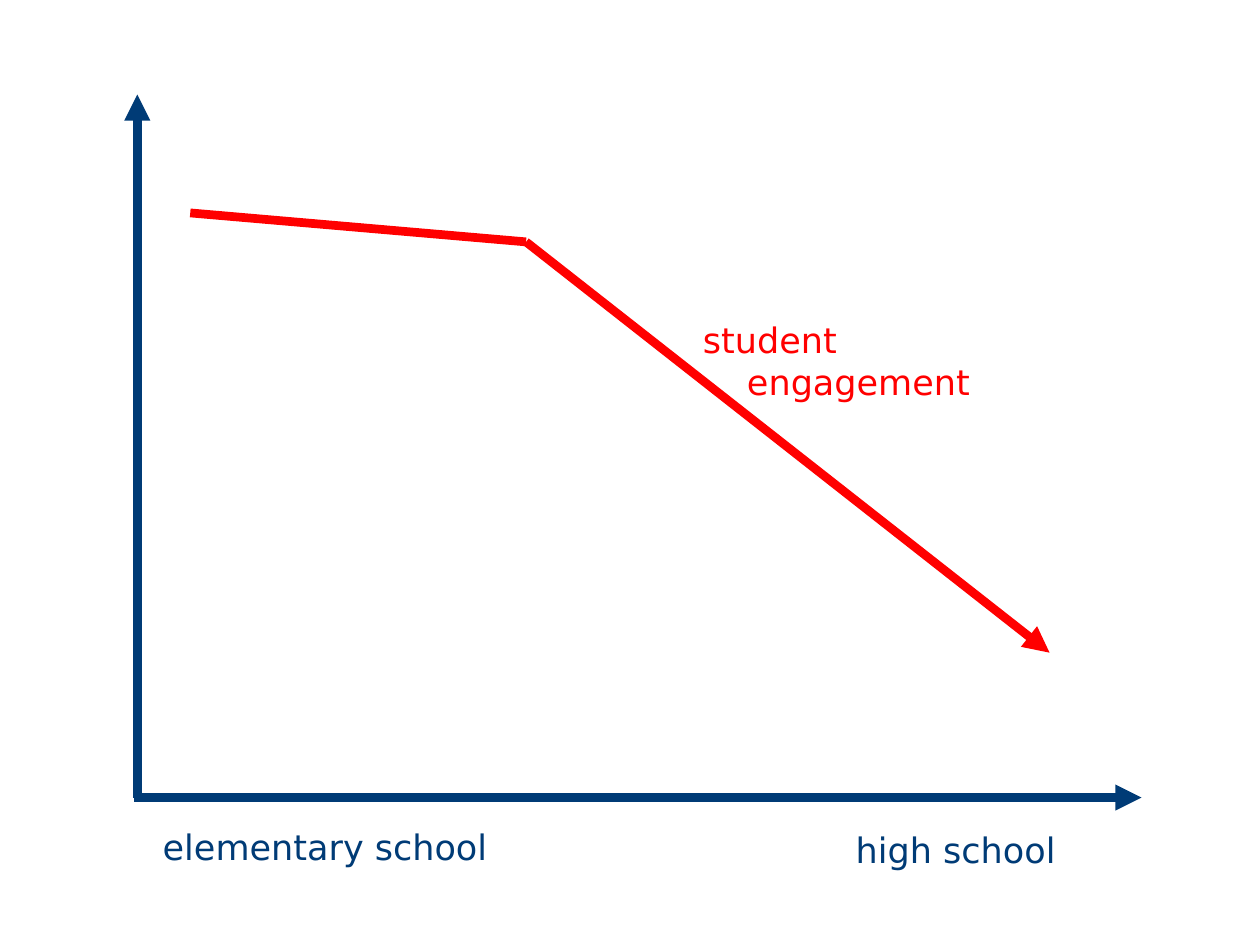
from lxml import etree
from pptx import Presentation
from pptx.dml.color import RGBColor
from pptx.enum.shapes import MSO_CONNECTOR
from pptx.enum.text import MSO_AUTO_SIZE, PP_ALIGN
from pptx.oxml.ns import qn
from pptx.util import Inches, Pt

STRAIGHT = MSO_CONNECTOR.STRAIGHT
LEFT, CENTER = PP_ALIGN.LEFT, PP_ALIGN.CENTER
GROW = MSO_AUTO_SIZE.SHAPE_TO_FIT_TEXT

COLORS = {"axis": "003B76", "engagement": "FF0000"}
FONT = "DejaVu Sans"
COLS, ROWS = 100, 75  # grid of 0.1 inch cells
CELL = Inches(0.1)


def grid(*cells):
    """Turn grid columns and rows into slide lengths."""
    return [round(n * CELL) for n in cells]


def add_line(s, start, end, color, arrow=False):
    """Draw a thick line, with an arrowhead at its end if asked."""
    line = s.shapes.add_connector(STRAIGHT, *grid(*start, *end))
    line.line.color.rgb = RGBColor.from_string(COLORS[color])
    line.line.width = Pt(5)
    if arrow:
        etree.SubElement(line.line._get_or_add_ln(), qn("a:tailEnd"), type="triangle")
    etree.SubElement(line._element.spPr, qn("a:effectLst"))


def add_label(s, box, lines, color, align=CENTER, step=0):
    """Write one paragraph per line, each indented by one more step."""
    tf = s.shapes.add_textbox(*grid(*box)).text_frame
    tf.word_wrap = False
    tf.auto_size = GROW
    tf.text = "\n".join(lines)
    for i, p in enumerate(tf.paragraphs):
        p.alignment = align
        p.font.name = FONT
        p.font.size = Pt(20)
        p.font.color.rgb = RGBColor.from_string(COLORS[color])
        if i and step:
            p._p.get_or_add_pPr().set("marL", str(i * step))


def main():
    prs = Presentation()
    prs.slide_width, prs.slide_height = grid(COLS, ROWS)
    s = prs.slides.add_slide(prs.slide_layouts[6])

    # Axes
    axis_x, axis_y = 10.9, 63.3
    add_line(s, (axis_x, axis_y), (axis_x, 7.5), "axis", arrow=True)
    add_line(s, (axis_x - 0.3, axis_y), (90.6, axis_y), "axis", arrow=True)

    # School stages along the horizontal axis
    add_label(s, (66.9, 65.3, 17.9, 4.4), ["high school"], "axis")
    add_label(s, (11.9, 65, 27.8, 4.4), ["elementary school"], "axis")

    # Engagement curve: slow decline, then a steep fall
    bend = (41.75, 19.2)
    add_line(s, (15.1, 16.9), bend, "engagement")
    add_line(s, bend, (83.3, 51.8), "engagement", arrow=True)
    add_label(s, (54.8, 24.8, 23.5, 7.7), ["student", "engagement"],
              "engagement", LEFT, step=Inches(0.35))

    prs.save("out.pptx")


if __name__ == "__main__":
    main()
